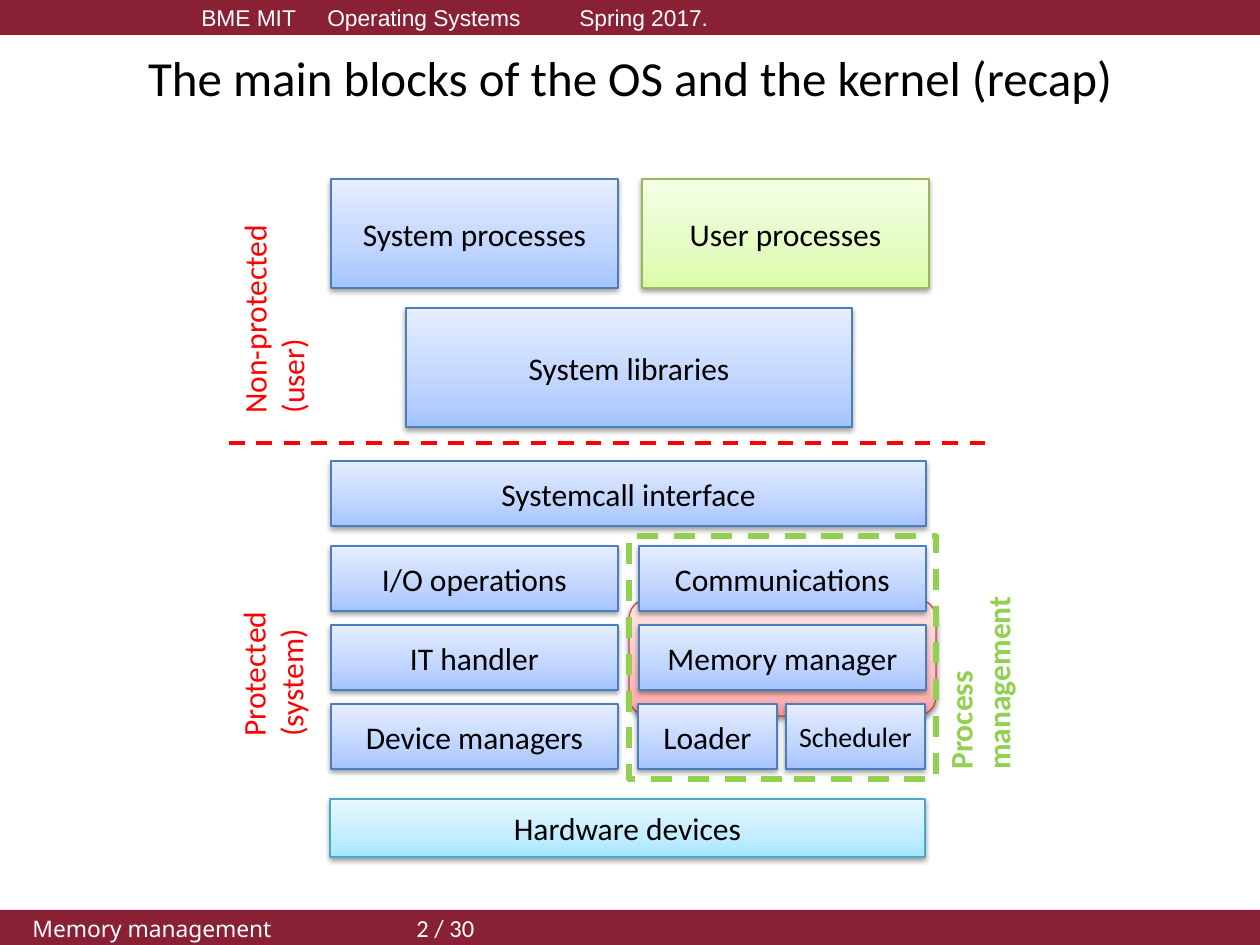
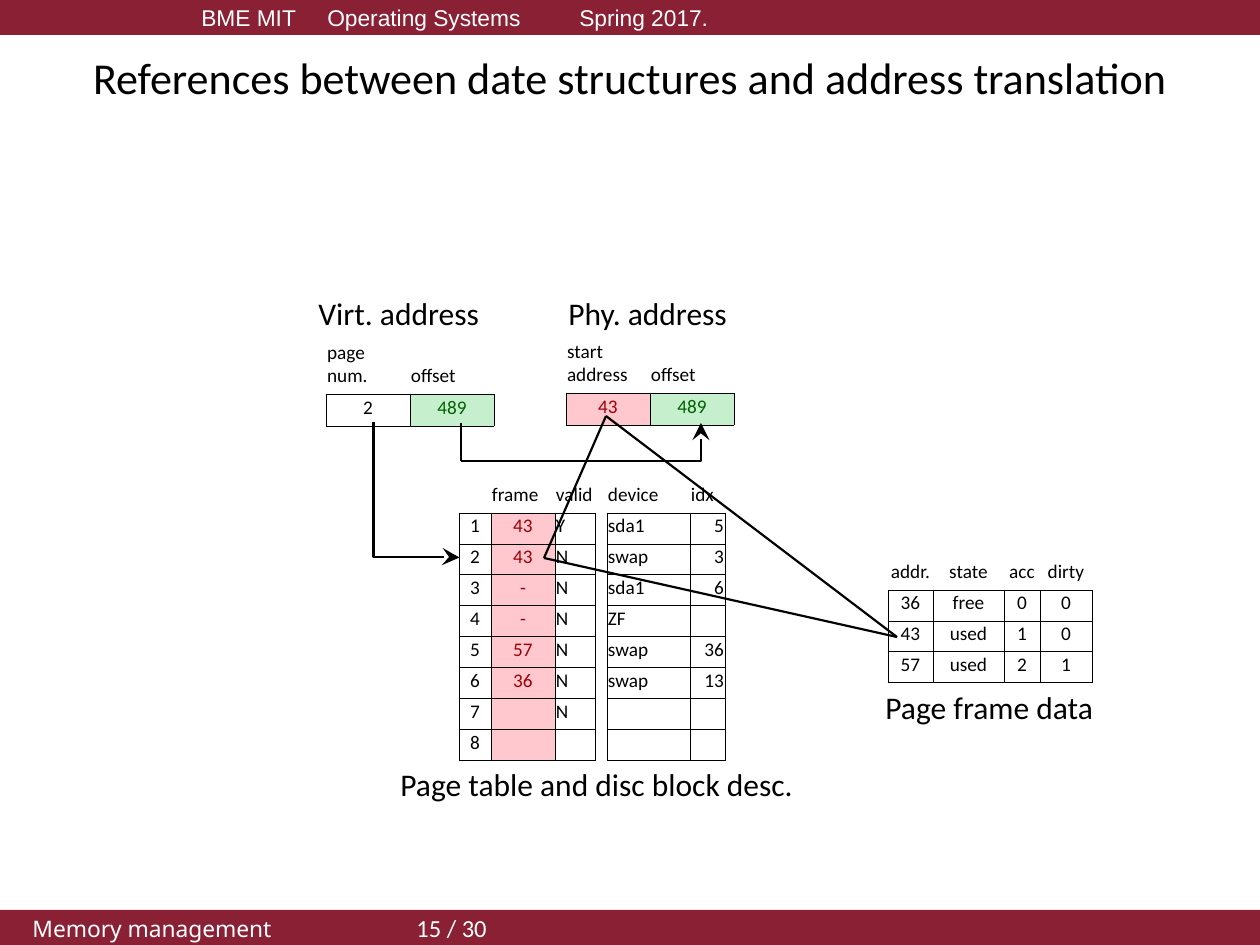
"""Build two operating-systems slides: the kernel blocks and the address translation."""
from copy import deepcopy
from dataclasses import dataclass

from lxml.etree import SubElement
from pptx import Presentation
from pptx.dml.color import RGBColor
from pptx.enum.dml import MSO_LINE
from pptx.enum.shapes import MSO_CONNECTOR, MSO_SHAPE
from pptx.enum.text import MSO_ANCHOR, PP_ALIGN
from pptx.oxml.ns import qn
from pptx.slide import Slide
from pptx.util import Emu, Inches, Pt

PX_PER_INCH = 126
SLIDE_W, SLIDE_H, BAND_H = 1260, 945, 35

BLACK = RGBColor(0x00, 0x00, 0x00)
WHITE = RGBColor(0xFF, 0xFF, 0xFF)
BAND = RGBColor(0x89, 0x20, 0x34)
RED = RGBColor(0xFF, 0x00, 0x00)
GREEN = RGBColor(0x92, 0xD0, 0x50)
BAD_FILL = RGBColor(0xFF, 0xC7, 0xCE)
BAD_TEXT = RGBColor(0x9C, 0x00, 0x06)
GOOD_FILL = RGBColor(0xC6, 0xEF, 0xCE)
GOOD_TEXT = RGBColor(0x00, 0x61, 0x00)

LEFT, CENTER, RIGHT = PP_ALIGN.LEFT, PP_ALIGN.CENTER, PP_ALIGN.RIGHT


@dataclass(frozen=True)
class Tone:
    dark: RGBColor
    middle: RGBColor
    light: RGBColor
    edge: RGBColor


BLUE_TONE = Tone(RGBColor(0xA4, 0xC4, 0xFF), RGBColor(0xBF, 0xD4, 0xFF),
                 RGBColor(0xE6, 0xEE, 0xFF), RGBColor(0x4B, 0x7E, 0xBC))
GREEN_TONE = Tone(RGBColor(0xDA, 0xFD, 0xA7), RGBColor(0xE4, 0xFC, 0xC2),
                  RGBColor(0xF5, 0xFF, 0xE7), RGBColor(0x98, 0xB9, 0x55))
CYAN_TONE = Tone(RGBColor(0xA7, 0xE6, 0xFF), RGBColor(0xC1, 0xED, 0xFF),
                 RGBColor(0xE7, 0xF8, 0xFF), RGBColor(0x46, 0xAA, 0xC5))
RED_TONE = Tone(RGBColor(0xFF, 0xA6, 0xA5), RGBColor(0xFF, 0xC0, 0xBF),
                RGBColor(0xFF, 0xE7, 0xE7), RGBColor(0xBF, 0x4C, 0x48))


@dataclass(frozen=True)
class Block:
    text: str
    left: int
    top: int
    width: int
    height: int
    tone: Tone = BLUE_TONE
    size: int = 18
    outline: MSO_SHAPE = MSO_SHAPE.RECTANGLE


@dataclass(frozen=True)
class Label:
    text: str
    left: int
    top: int
    width: int
    height: int = 50
    color: RGBColor = BLACK
    bold: bool = False
    upright: bool = False
    wraps: bool = False


@dataclass(frozen=True)
class Column:
    width: int
    align: PP_ALIGN = CENTER
    color: RGBColor = BLACK
    fill: RGBColor | None = None
    is_gap: bool = False


@dataclass(frozen=True)
class Grid:
    left: int
    top: int
    columns: list[Column]
    header: list[str]
    rows: list[list[str]]
    header_height: int = 31
    row_height: int = 31
    header_align: PP_ALIGN = LEFT


def px(*lengths: int) -> list[Emu]:
    return [Emu(round(length * Inches(1) / PX_PER_INCH)) for length in lengths]


def set_font(paragraph, size: float, color: RGBColor, name: str = "Calibri",
             bold: bool = False) -> None:
    font = paragraph.font
    font.name, font.size, font.bold = name, Pt(size), bold
    font.color.rgb = color


def draw_band(slide: Slide, top: int, indent: float, parts: list[tuple[str, str, int]]) -> None:
    band = slide.shapes.add_shape(MSO_SHAPE.RECTANGLE, *px(0, top, SLIDE_W, BAND_H))
    band.shadow.inherit = False
    band.fill.solid()
    band.fill.fore_color.rgb = BAND
    band.line.fill.background()
    band.text_frame.vertical_anchor = MSO_ANCHOR.MIDDLE
    paragraph = band.text_frame.paragraphs[0]
    paragraph.alignment = LEFT
    properties = paragraph._p.get_or_add_pPr()
    properties.set("marL", str(Inches(indent)))
    properties.set("indent", "0")
    properties.set("defTabSz", str(Inches(1)))
    for text, name, size in parts:
        run = paragraph.add_run()
        run.text = text
        run.font.name, run.font.size = name, Pt(size)
        run.font.color.rgb = WHITE


def start_slide(deck: Presentation, title: str, title_size: float, page: int) -> Slide:
    slide = deck.slides.add_slide(deck.slide_layouts[5])
    heading = slide.shapes.title
    heading.left, heading.top, heading.width, heading.height = px(63, 38, 1134, 77)
    heading.text_frame.text = title
    heading.text_frame.vertical_anchor = MSO_ANCHOR.MIDDLE
    heading.text_frame.paragraphs[0].alignment = CENTER
    set_font(heading.text_frame.paragraphs[0], title_size, BLACK)
    draw_band(slide, 0, 1.5, [("BME MIT\tOperating Systems\tSpring 2017.", "Arial", 13)])
    draw_band(slide, SLIDE_H - BAND_H, 0.16,
              [("Memory management\t\t ", "Noto Sans", 13), (f"{page} / 30", "Calibri", 14)])
    return slide


def draw_block(slide: Slide, block: Block) -> None:
    shape = slide.shapes.add_shape(
        block.outline, *px(block.left, block.top, block.width, block.height))
    tone = block.tone
    shape.fill.gradient()
    shape.fill.gradient_angle = 90
    stop_list = shape._element.spPr.find(".//" + qn("a:gsLst"))
    stop_list.insert(1, deepcopy(stop_list[0]))
    stops = zip(shape.fill.gradient_stops, (0, 0.35, 1), (tone.dark, tone.middle, tone.light))
    for stop, position, color in stops:
        stop.position, stop.color.rgb = position, color
    shape.line.color.rgb, shape.line.width = tone.edge, Pt(0.75)
    shape.shadow.inherit = False
    effects = shape._element.spPr.find(qn("a:effectLst"))
    shadow = SubElement(effects, qn("a:outerShdw"), blurRad=str(Pt(3.1)), dist=str(Pt(1.6)),
                        dir="5400000", rotWithShape="0")
    shade = SubElement(shadow, qn("a:srgbClr"), val="000000")
    SubElement(shade, qn("a:alpha"), val="38000")
    if block.text:
        shape.text_frame.text = block.text
        shape.text_frame.vertical_anchor = MSO_ANCHOR.MIDDLE
        shape.text_frame.paragraphs[0].alignment = CENTER
        set_font(shape.text_frame.paragraphs[0], block.size, BLACK)


def draw_label(slide: Slide, label: Label) -> None:
    frame = slide.shapes.add_textbox(
        *px(label.left, label.top, label.width, label.height)).text_frame
    frame.word_wrap = label.wraps
    frame.text = label.text
    if label.upright:
        frame._txBody.bodyPr.set("vert", "vert270")
    for paragraph in frame.paragraphs:
        set_font(paragraph, 18, label.color, bold=label.bold)


def draw_line(slide: Slide, start: tuple[int, int], end: tuple[int, int],
              kind: MSO_CONNECTOR = MSO_CONNECTOR.STRAIGHT, color: RGBColor = BLACK,
              width: float = 1.25):
    line = slide.shapes.add_connector(kind, *px(*start, *end))
    line.line.color.rgb, line.line.width = color, Pt(width)
    SubElement(line._element.spPr, qn("a:effectLst"))
    return line


def draw_elbow_arrow(slide: Slide, start: tuple[int, int], end: tuple[int, int],
                     bend: int, turn: int = 0) -> None:
    arrow = draw_line(slide, start, end, MSO_CONNECTOR.ELBOW)
    properties = arrow._element.spPr
    properties.find(qn("a:xfrm")).set("rot", str(turn * 60000))
    guides = properties.find(qn("a:prstGeom")).get_or_add_avLst()
    SubElement(guides, qn("a:gd"), name="adj1", fmla=f"val {bend}")
    SubElement(arrow.line._get_or_add_ln(), qn("a:tailEnd"), type="stealth", w="lg", len="lg")


def set_borders(cell, drawn_sides: str) -> None:
    properties = cell._tc.get_or_add_tcPr()
    for side in "LRTB":
        border = SubElement(properties, qn(f"a:ln{side}"), w=str(Pt(0.5)))
        if side in drawn_sides:
            fill = SubElement(border, qn("a:solidFill"))
            SubElement(fill, qn("a:srgbClr"), val=str(BLACK))
        else:
            SubElement(border, qn("a:noFill"))


def fill_cell(cell, text: str, align: PP_ALIGN, color: RGBColor, fill: RGBColor | None,
              drawn_sides: str) -> None:
    cell.margin_left, cell.margin_top, cell.margin_right, cell.margin_bottom = px(1, 1, 1, 6)
    cell.vertical_anchor = MSO_ANCHOR.BOTTOM
    set_borders(cell, drawn_sides)
    if fill is None:
        cell.fill.background()
    else:
        cell.fill.solid()
        cell.fill.fore_color.rgb = fill
    paragraph = cell.text_frame.paragraphs[0]
    paragraph.alignment = align
    if text:
        paragraph.text = text
    else:
        SubElement(paragraph._p, qn("a:endParaRPr"), sz="1100")
    set_font(paragraph, 11, color)


def draw_grid(slide: Slide, grid: Grid) -> None:
    width = sum(column.width for column in grid.columns)
    height = grid.header_height + grid.row_height * len(grid.rows)
    table = slide.shapes.add_table(len(grid.rows) + 1, len(grid.columns),
                                   *px(grid.left, grid.top, width, height)).table
    table.first_row = table.horz_banding = False
    for row in table.rows:
        row.height = px(grid.row_height)[0]
    table.rows[0].height = px(grid.header_height)[0]
    for c, column in enumerate(grid.columns):
        table.columns[c].width = px(column.width)[0]
        fill_cell(table.cell(0, c), grid.header[c], grid.header_align, BLACK, None,
                  "" if column.is_gap else "B")
        for r, values in enumerate(grid.rows, 1):
            fill_cell(table.cell(r, c), values[c], column.align, column.color, column.fill,
                      "LR" if column.is_gap else "LRTB")
        if column.is_gap:
            table.cell(0, c - 1).merge(table.cell(0, c))


def build_kernel_blocks(deck: Presentation) -> None:
    slide = start_slide(deck, "The main blocks of the OS and the kernel (recap)", 28, 2)
    left, right, half, full, height = 331, 639, 287, 595, 65
    kernel_rows = [546 + 79 * i for i in range(3)]
    blocks = [
        Block("", 629, 599, 307, 117, RED_TONE, outline=MSO_SHAPE.ROUNDED_RECTANGLE),
        Block("Hardware devices", left - 1, 799, full, 58, CYAN_TONE),
        Block("System libraries", 406, 308, 446, 119),
        Block("System processes", left, 179, half, 109),
        Block("User processes", 642, 179, half, 109, GREEN_TONE),
        Block("Systemcall interface", left, 461, full, height),
        Block("Loader", 638, kernel_rows[2], 139, height),
        Block("Scheduler", 786, kernel_rows[2], 139, height, size=16),
    ]
    for names, column in ((("I/O operations", "IT handler", "Device managers"), left),
                          (("Communications", "Memory manager"), right)):
        blocks += [Block(name, column, top, half, height)
                   for name, top in zip(names, kernel_rows)]
    for block in blocks:
        draw_block(slide, block)

    boundary = draw_line(slide, (229, 443), (986, 443), color=RED, width=2.25)
    boundary.line.dash_style = MSO_LINE.DASH
    process_frame = slide.shapes.add_shape(MSO_SHAPE.RECTANGLE, *px(629, 536, 307, 243))
    process_frame.shadow.inherit = False
    process_frame.fill.background()
    process_frame.line.color.rgb, process_frame.line.width = GREEN, Pt(3)
    process_frame.line.dash_style = MSO_LINE.DASH

    for label in (
        Label("Non-protected\n(user)", 229, 223, 102, 203, RED, upright=True),
        Label("Protected\n(system)", 228, 590, 102, 159, RED, upright=True, wraps=True),
        Label("Process management", 935, 577, 102, 205, GREEN, True, True, True),
    ):
        draw_label(slide, label)


def build_address_translation(deck: Presentation) -> None:
    slide = start_slide(
        deck, "References between date structures and address translation", 25.2, 15)
    offset = Column(84, color=GOOD_TEXT, fill=GOOD_FILL)
    frame_cells = {"color": BAD_TEXT, "fill": BAD_FILL}
    page_rows = [
        ["1", "43", "Y", "", "sda1", "5"],
        ["2", "43", "N", "", "swap", "3"],
        ["3", "-", "N", "", "sda1", "6"],
        ["4", "-", "N", "", "ZF", ""],
        ["5", "57", "N", "", "swap", "36"],
        ["6", "36", "N", "", "swap", "13"],
        ["7", "", "N", "", "", ""],
        ["8", "", "", "", "", ""],
    ]
    for grid in (
        Grid(326, 339, [Column(84), offset], ["page num.", "offset"], [["2", "489"]], 55, 32),
        Grid(566, 338, [Column(84, **frame_cells), offset], ["start address", "offset"],
             [["43", "489"]], 55, 32),
        Grid(459, 482, [Column(32), Column(64, **frame_cells), Column(40, LEFT),
                        Column(12, is_gap=True), Column(83, LEFT), Column(35, RIGHT)],
             ["", "frame", "valid", "", "device", "idx"], page_rows),
        Grid(888, 559, [Column(45), Column(71), Column(36), Column(52)],
             ["addr.", "state", "acc", "dirty"],
             [["36", "free", "0", "0"], ["43", "used", "1", "0"], ["57", "used", "2", "1"]],
             header_align=CENTER),
    ):
        draw_grid(slide, grid)

    for label in (
        Label("Virt. address", 306, 288, 192),
        Label("Phy. address", 556, 288, 185),
        Label("Page table and disc block desc.", 388, 759, 423),
        Label("Page frame data", 873, 682, 236),
    ):
        draw_label(slide, label)

    draw_elbow_arrow(slide, (484, 447), (349, 533), bend=99400, turn=270)
    draw_elbow_arrow(slide, (461, 461), (701, 423), bend=100000)
    draw_line(slide, (461, 461), (461, 423))
    page_entry, start_address, frame_entry = (544, 558), (606, 416), (897, 637)
    draw_line(slide, page_entry, frame_entry)
    draw_line(slide, page_entry, start_address)
    draw_line(slide, start_address, frame_entry)


def main() -> None:
    deck = Presentation()
    deck.slide_width, deck.slide_height = px(SLIDE_W, SLIDE_H)
    build_kernel_blocks(deck)
    build_address_translation(deck)
    deck.save("out.pptx")


if __name__ == "__main__":
    main()
